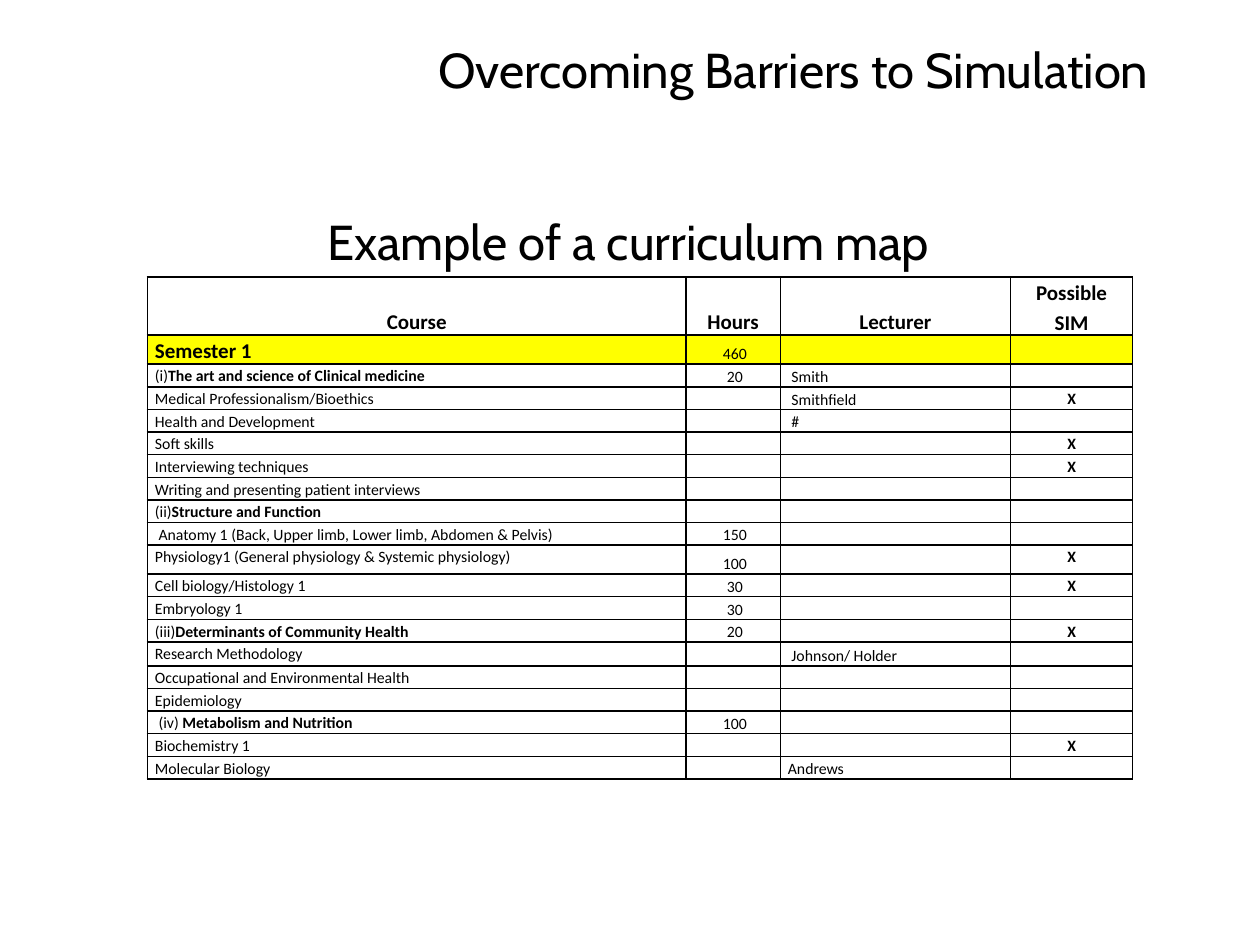
import pptx
import pptx.dml.color
import pptx.enum.text
import pptx.oxml
import pptx.oxml.ns
import pptx.util

COLOURS = {"ink": "000000", "highlight": "FFFF00"}
SLIDE_WIDTH, SLIDE_HEIGHT = pptx.util.Inches(10), pptx.util.Inches(7.5)
GRID_COLUMNS, GRID_ROWS = 100, 75
CELL_MARGIN = 0.6
ALIGN = pptx.enum.text.PP_ALIGN
ANCHOR = pptx.enum.text.MSO_ANCHOR

TITLE_BOX = (24.4, 1.1, 67.7, 8.7)
SUBTITLE_BOX = (7, 16.3, 85.7, 5.7)
TABLE_BOX = (11.7, 22, 78.2, 39.8)
COLUMN_WEIGHTS = [4.28, 0.75, 1.83, 0.97]
COLUMN_ALIGNMENTS = [ALIGN.LEFT, ALIGN.CENTER, ALIGN.LEFT, ALIGN.CENTER]
COLUMN_ANCHORS = [ANCHOR.TOP, ANCHOR.BOTTOM, ANCHOR.BOTTOM, ANCHOR.TOP]
PLAIN_ROW_WEIGHT = 0.18
ROW_WEIGHTS = {0: 0.46, 1: 0.23, 10: 0.23, 14: 0.19}

CURRICULUM = [
    (("", "Course"), "Hours", "Lecturer", "Possible SIM"),
    (("", "Semester 1"), " 460", "", ""),
    (("(i)", "The art and science of Clinical medicine"), " 20", " Smith", ""),
    (("Medical Professionalism/Bioethics", ""), "", " Smithfield", "X"),
    (("Health and Development", ""), "", " #", ""),
    (("Soft skills", ""), "", "", "X"),
    (("Interviewing techniques", ""), "", "", "X"),
    (("Writing and presenting patient interviews", ""), "", "", ""),
    (("(ii)", "Structure and Function"), "", "", ""),
    ((" Anatomy 1 (Back, Upper limb, Lower limb, Abdomen & Pelvis)", ""), " 150", "", ""),
    (("Physiology1 (General physiology & Systemic physiology)", ""), " 100", "", "X"),
    (("Cell biology/Histology 1", ""), " 30", "", "X"),
    (("Embryology 1", ""), " 30", "", ""),
    (("(iii)", "Determinants of Community Health"), " 20", "", "X"),
    (("Research Methodology", ""), "", " Johnson/ Holder", ""),
    (("Occupational and Environmental Health", ""), "", "", ""),
    (("Epidemiology", ""), "", "", ""),
    ((" (iv) ", "Metabolism and Nutrition"), " 100", "", ""),
    (("Biochemistry 1", ""), "", "", "X"),
    (("Molecular Biology", ""), "", "Andrews", ""),
]


def across(columns):
    """Return the width of a number of grid columns."""
    return int(SLIDE_WIDTH * columns / GRID_COLUMNS)


def down(rows):
    """Return the height of a number of grid rows."""
    return int(SLIDE_HEIGHT * rows / GRID_ROWS)


def place(box):
    """Turn a grid box into left, top, width and height."""
    left, top, width, height = box
    return across(left), down(top), across(width), down(height)


def format_run(run, font_name, size, bold=False):
    """Give a run its font, size, weight and colour."""
    run.font.name = font_name
    run.font.size = pptx.util.Pt(size)
    run.font.bold = bold
    run.font.color.rgb = pptx.dml.color.RGBColor.from_string(COLOURS["ink"])


def add_heading(slide, box, text, alignment, anchor):
    """Write one heading line in the given box."""
    text_frame = slide.shapes.add_textbox(*place(box)).text_frame
    text_frame.word_wrap = True
    text_frame.vertical_anchor = anchor
    text_frame.text = text
    paragraph = text_frame.paragraphs[0]
    paragraph.alignment = alignment
    format_run(paragraph.runs[0], "Cabin", 28)


def add_borders(cell):
    """Draw a thin line on all four sides of a cell."""
    properties = cell._tc.get_or_add_tcPr()
    for side in ("lnL", "lnR", "lnT", "lnB"):
        properties.append(pptx.oxml.parse_xml(
            f'<a:{side} {pptx.oxml.ns.nsdecls("a")} w="{pptx.util.Pt(1)}">'
            f'<a:solidFill><a:srgbClr val="{COLOURS["ink"]}"/></a:solidFill></a:{side}>'))


def fill_cell(cell, parts, size, alignment, anchor, highlighted):
    """Write the (text, bold) parts of a cell and style it."""
    cell.margin_left = cell.margin_right = across(CELL_MARGIN)
    cell.margin_top = cell.margin_bottom = 0
    cell.vertical_anchor = anchor
    add_borders(cell)
    if highlighted:
        cell.fill.solid()
        cell.fill.fore_color.rgb = pptx.dml.color.RGBColor.from_string(COLOURS["highlight"])
    else:
        cell.fill.background()
    paragraph = cell.text_frame.paragraphs[0]
    paragraph.alignment = alignment
    paragraph.line_spacing = 1.15
    for text, bold in parts:
        if text:
            run = paragraph.add_run()
            run.text = text
            format_run(run, "Calibri", size, bold)
    if not paragraph.runs:
        paragraph._p.append(pptx.oxml.parse_xml(
            f'<a:endParaRPr {pptx.oxml.ns.nsdecls("a")} sz="{size * 100}"/>'))


def add_curriculum_table(slide, box):
    """Build the curriculum map inside the given box."""
    left, top, width, height = place(box)
    table = slide.shapes.add_table(
        len(CURRICULUM), len(COLUMN_WEIGHTS), left, top, width, height).table
    table.first_row = table.horz_banding = False
    for column, weight in zip(table.columns, COLUMN_WEIGHTS):
        column.width = int(width * weight / sum(COLUMN_WEIGHTS))
    weights = [ROW_WEIGHTS.get(index, PLAIN_ROW_WEIGHT) for index in range(len(CURRICULUM))]
    for row_index, (course, *details) in enumerate(CURRICULUM):
        table.rows[row_index].height = int(height * weights[row_index] / sum(weights))
        is_header = row_index == 0
        for column_index in range(len(COLUMN_WEIGHTS)):
            if column_index == 0:
                parts = list(zip(course, (False, True)))
            else:
                parts = [(details[column_index - 1], is_header or column_index == 3)]
            alignment, anchor = COLUMN_ALIGNMENTS[column_index], COLUMN_ANCHORS[column_index]
            if is_header:
                alignment = ALIGN.CENTER
                anchor = ANCHOR.TOP if column_index == 3 else ANCHOR.BOTTOM
            size = 12 if is_header or (row_index, column_index) == (1, 0) else 9
            fill_cell(table.cell(row_index, column_index), parts, size,
                      alignment, anchor, row_index == 1)


def main():
    """Create the presentation and save it."""
    presentation = pptx.Presentation()
    presentation.slide_width, presentation.slide_height = SLIDE_WIDTH, SLIDE_HEIGHT
    slide = presentation.slides.add_slide(presentation.slide_layouts[6])
    add_heading(slide, TITLE_BOX, "Overcoming Barriers to Simulation", ALIGN.RIGHT, ANCHOR.MIDDLE)
    add_heading(slide, SUBTITLE_BOX, "Example of a curriculum map", ALIGN.CENTER, ANCHOR.TOP)
    add_curriculum_table(slide, TABLE_BOX)
    presentation.save("out.pptx")


if __name__ == "__main__":
    main()
